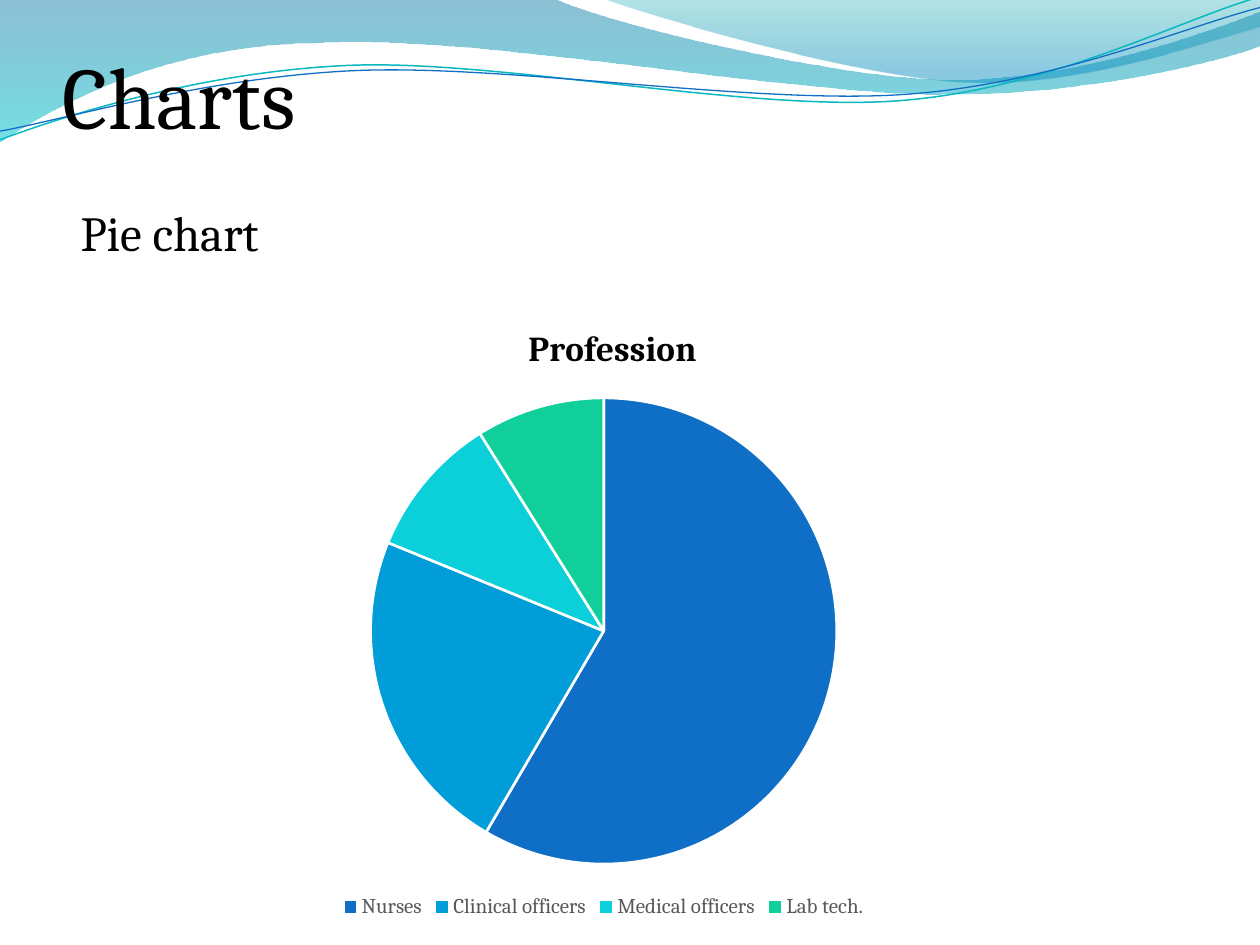
from lxml import etree
from pptx import Presentation
from pptx.chart.data import CategoryChartData
from pptx.dml.color import RGBColor
from pptx.enum.chart import XL_CHART_TYPE, XL_LEGEND_POSITION
from pptx.enum.text import MSO_ANCHOR
from pptx.oxml.ns import qn
from pptx.util import Pt

PIE = XL_CHART_TYPE.PIE
LEGEND_BOTTOM = XL_LEGEND_POSITION.BOTTOM
ANCHOR_BOTTOM = MSO_ANCHOR.BOTTOM
FONT = "Cambria"
color = RGBColor.from_string


def add_curve(shapes, start, segments, close):
    """Segments hold one point for a straight line, three for a Bezier curve."""
    builder = shapes.build_freeform(Pt(start[0]), Pt(start[1]), scale=1.0)
    points = [point for segment in segments for point in segment]
    builder.add_line_segments([(Pt(x), Pt(y)) for x, y in points], close=close)
    shape = builder.convert_to_shape()
    shape.shadow.inherit = False
    lines = iter(list(shape._element.iter(qn("a:lnTo"))))
    for segment in segments:
        parts = [next(lines) for _ in segment]
        if len(parts) == 3:
            bezier = etree.Element(qn("a:cubicBezTo"))
            parts[0].addprevious(bezier)
            for line in parts:
                bezier.append(line[0])
                line.getparent().remove(line)
    return shape


def set_layout(element, index, **fractions):
    """Place a chart part by fractions of the chart's size."""
    for old in element.findall(qn("c:layout")):
        element.remove(old)
    layout = etree.Element(qn("c:layout"))
    element.insert(index, layout)
    manual = etree.SubElement(layout, qn("c:manualLayout"))
    if "w" in fractions:
        etree.SubElement(manual, qn("c:layoutTarget")).set("val", "inner")
    for axis in "xy":
        etree.SubElement(manual, qn(f"c:{axis}Mode")).set("val", "edge")
    for name, value in fractions.items():
        etree.SubElement(manual, qn(f"c:{name}")).set("val", str(value))


presentation = Presentation()
presentation.slide_width, presentation.slide_height = Pt(720), Pt(540)
slide = presentation.slides.add_slide(presentation.slide_layouts[6])
shapes = slide.shapes

# Header waves: start, segments, gradient stops (position, colour, opacity %)
waves = [
    ((0, -0.7),
     [[(316.8, -0.7)],
      [(342.7, 12.2), (478.1, 45.4), (545.8, 45.4)],
      [(614.2, 45.4), (689.8, 18.7), (720, 6.5)],
      [(720.7, 25.9)],
      [(707.8, 31.7), (626.4, 54.7), (537.1, 54)],
      [(447.8, 54), (275, 20.2), (185, 24.5)],
      [(92.9, 25.2), (33.1, 59.8), (-0.7, 81.4)]],
     [(0, "0074A1", 45), (1, "00C6CF", 55)]),
    ((344.9, -0.7),
     [[(366.5, 7.9), (491, 44.6), (553.7, 46.8)],
      [(616.3, 49.7), (691.9, 23), (720, 15.1)],
      [(720, 0)]],
     [(0, "00A1A9", 30), (0.8, "008BBF", 45)]),
]
for start, segments, stops in waves:
    wave = add_curve(shapes, start, segments, True)
    wave.line.fill.background()
    wave.fill.gradient()
    wave.fill.gradient_angle = 270
    for stop, (position, shade, opacity) in zip(wave.fill.gradient_stops, stops):
        stop.position = position
        stop.color.rgb = color(shade)
    for element, (_, _, opacity) in zip(wave._element.iter(qn("a:srgbClr")), stops):
        etree.SubElement(element, qn("a:alpha")).set("val", str(opacity * 1000))

wave_lines = [
    ((0, 79.9),
     [[(34.6, 67), (113.8, 41), (199.4, 37.4)],
      [(284.4, 33.8), (427, 64.1), (513.4, 57.6)],
      [(599.8, 51.1), (675.4, 10.8), (718.6, -1.4)]], "0AB8BF", 0.85),
    ((0, 74.9),
     [[(33.8, 69.1), (118.1, 43.9), (203.8, 40.3)],
      [(290.2, 36.7), (429.8, 59.8), (516.2, 54)],
      [(601.9, 48.2), (677.5, 15.1), (720, 4.3)]], "0F6FC6", 0.75),
]
for start, segments, shade, width in wave_lines:
    wave_line = add_curve(shapes, start, segments, False)
    wave_line.fill.background()
    wave_line.line.color.rgb = color(shade)
    wave_line.line.width = Pt(width)

# Pie chart
chart_data = CategoryChartData()
chart_data.categories = ["Nurses", "Clinical officers", "Medical officers", "Lab tech."]
chart_data.add_series("Series 1", [59, 23, 10, 9])
chart = shapes.add_chart(PIE, Pt(12), Pt(168), Pt(666), Pt(360), chart_data).chart
chart.font.name = FONT
chart.font.size = Pt(10)
chart.font.color.rgb = color("000000")

chart.has_title = True
title_paragraph = chart.chart_title.text_frame.paragraphs[0]
title_paragraph.text = "Profession"
title_paragraph.font.name = FONT
title_paragraph.font.size = Pt(20)
title_paragraph.font.bold = True
title_paragraph.font.color.rgb = color("000000")
set_layout(chart.chart_title._element, 1, x=0.43, y=0.04)
set_layout(chart._chartSpace.chart.plotArea, 0, x=0.3, y=0.16, w=0.4, h=0.75)

chart.has_legend = True
chart.legend.position = LEGEND_BOTTOM
chart.legend.include_in_layout = False
chart.legend.font.name = FONT
chart.legend.font.size = Pt(12)
chart.legend.font.color.rgb = color("595959")

plot = chart.plots[0]
plot.vary_by_categories = True
for index, shade in enumerate(["0F6FC6", "009DD9", "0BD0D9", "10CF9B"]):
    slice_format = plot.series[0].points[index].format
    slice_format.fill.solid()
    slice_format.fill.fore_color.rgb = color(shade)
    slice_format.line.color.rgb = color("FFFFFF")
    slice_format.line.width = Pt(1.5)

# Headings
title_box = shapes.add_textbox(Pt(36), Pt(12), Pt(648), Pt(72))
title_frame = title_box.text_frame
title_frame.vertical_anchor = ANCHOR_BOTTOM
title_frame.word_wrap = True
title_frame.margin_left = title_frame.margin_right = title_frame.margin_bottom = 0
subtitle_box = shapes.add_textbox(Pt(39), Pt(112), Pt(122), Pt(41))
for box, text, size in [(title_box, "Charts", 50), (subtitle_box, "Pie chart", 28)]:
    paragraph = box.text_frame.paragraphs[0]
    paragraph.text = text
    paragraph.font.name = FONT
    paragraph.font.size = Pt(size)
    paragraph.font.color.rgb = color("000000")

presentation.save("out.pptx")
